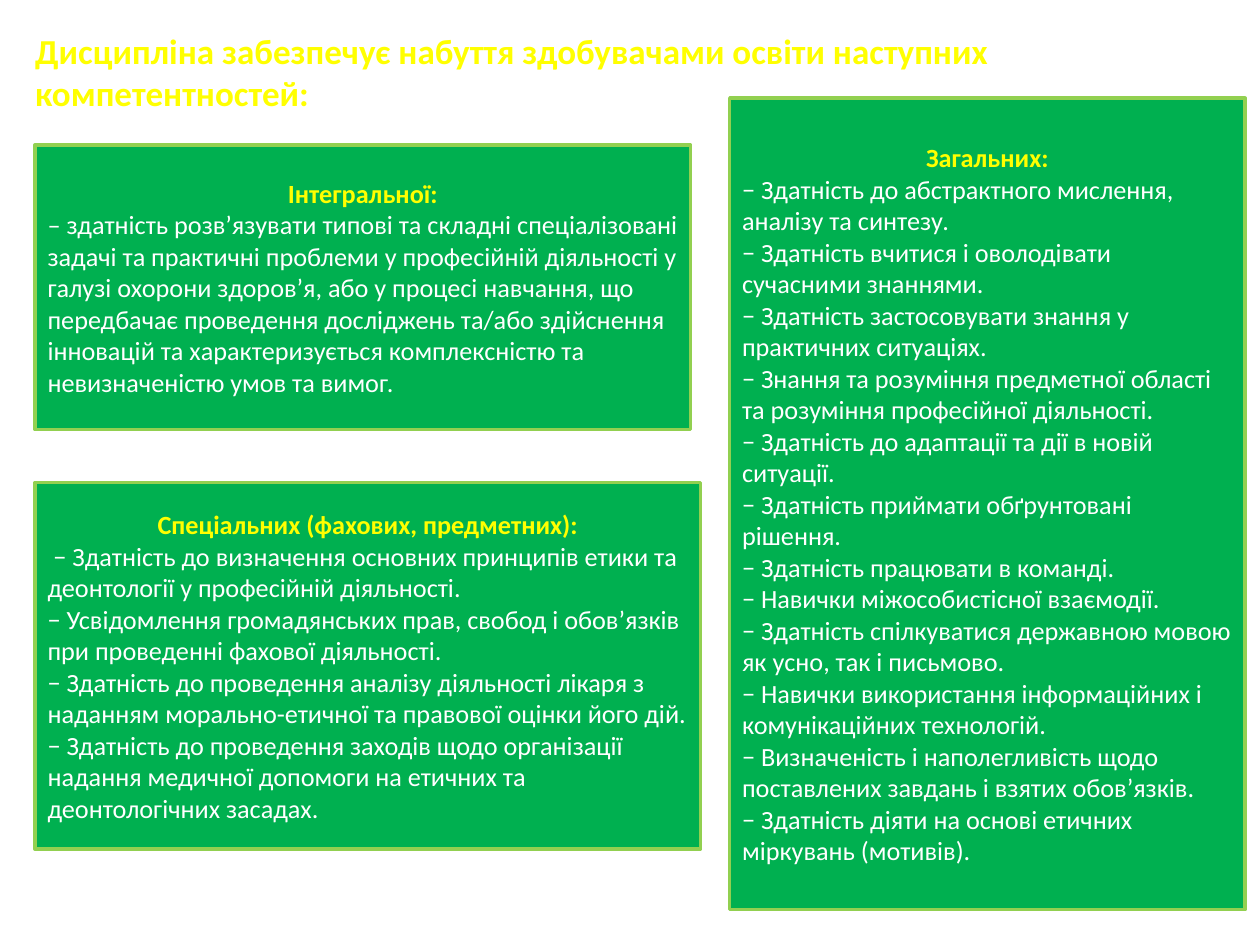
from pptx import Presentation
from pptx.dml.color import RGBColor
from pptx.enum.shapes import MSO_SHAPE as Shape
from pptx.enum.text import MSO_ANCHOR as Anchor, PP_ALIGN as Align
from pptx.util import Cm, Pt

YELLOW, WHITE, GREEN, LIME = "FFFF00", "FFFFFF", "00B050", "92D050"
HEADING = {"name": "Calibri", "size": Pt(15), "bold": True}
BODY = {**HEADING, "bold": False}
TITLE = {**HEADING, "size": Pt(20)}

TITLE_TEXT = "Дисципліна забезпечує набуття здобувачами освіти наступних компетентностей:"

PANELS = [
    ((0.71, 2.92, 13.21, 5.74), "Інтегральної:", [
        "– здатність розв’язувати типові та складні спеціалізовані задачі та практичні "
        "проблеми у професійній діяльності у галузі охорони здоров’я, або у процесі "
        "навчання, що передбачає проведення досліджень та/або здійснення інновацій та "
        "характеризується комплексністю та невизначеністю умов та вимог.",
    ]),
    ((14.71, 1.98, 10.39, 16.36), "Загальних:", [
        "− Здатність до абстрактного мислення, аналізу та синтезу.",
        "− Здатність вчитися і оволодівати сучасними знаннями.",
        "− Здатність застосовувати знання у практичних ситуаціях.",
        "− Знання та розуміння предметної області та розуміння професійної діяльності.",
        "− Здатність до адаптації та дії в новій ситуації.",
        "− Здатність приймати обґрунтовані рішення.",
        "− Здатність працювати в команді.",
        "− Навички міжособистісної взаємодії.",
        "− Здатність спілкуватися державною мовою як усно, так і письмово.",
        "− Навички використання інформаційних і комунікаційних технологій.",
        "− Визначеність і наполегливість щодо поставлених завдань і взятих обов’язків.",
        "− Здатність діяти на основі етичних міркувань (мотивів).",
    ]),
    ((0.71, 9.73, 13.41, 7.39), "Спеціальних (фахових, предметних):", [
        " − Здатність до визначення основних принципів етики та деонтології у "
        "професійній діяльності.",
        "− Усвідомлення громадянських прав, свобод і обов’язків при проведенні "
        "фахової діяльності.",
        "− Здатність до проведення аналізу діяльності лікаря з наданням "
        "морально-етичної та правової оцінки його дій.",
        "− Здатність до проведення заходів щодо організації надання медичної "
        "допомоги на етичних та деонтологічних засадах.",
    ]),
]


def set_color(color_format, value):
    color_format.rgb = RGBColor.from_string(value)


def write_paragraph(paragraph, text, font_format, color, alignment=Align.LEFT):
    paragraph.alignment = alignment
    run = paragraph.add_run()
    run.text = text
    for attribute, value in font_format.items():
        setattr(run.font, attribute, value)
    set_color(run.font.color, color)


def add_title(slide, text):
    shape = slide.shapes.add_textbox(Cm(0.46), Cm(0.47), Cm(24.94), Cm(2.45))
    shape.text_frame.word_wrap = True
    write_paragraph(shape.text_frame.paragraphs[0], text, TITLE, YELLOW)


def add_panel(slide, position, heading, items):
    shape = slide.shapes.add_shape(Shape.RECTANGLE, *map(Cm, position))
    shape.shadow.inherit = False
    shape.fill.solid()
    set_color(shape.fill.fore_color, GREEN)
    set_color(shape.line.color, LIME)
    shape.line.width = Pt(2)
    frame = shape.text_frame
    frame.word_wrap = True
    frame.vertical_anchor = Anchor.MIDDLE
    write_paragraph(frame.paragraphs[0], heading, HEADING, YELLOW, Align.CENTER)
    for item in items:
        write_paragraph(frame.add_paragraph(), item, BODY, WHITE)


def main():
    presentation = Presentation()
    presentation.slide_width, presentation.slide_height = Cm(25.4), Cm(19.05)
    slide = presentation.slides.add_slide(presentation.slide_layouts[6])
    add_title(slide, TITLE_TEXT)
    for position, heading, items in PANELS:
        add_panel(slide, position, heading, items)
    presentation.save("out.pptx")


if __name__ == "__main__":
    main()
